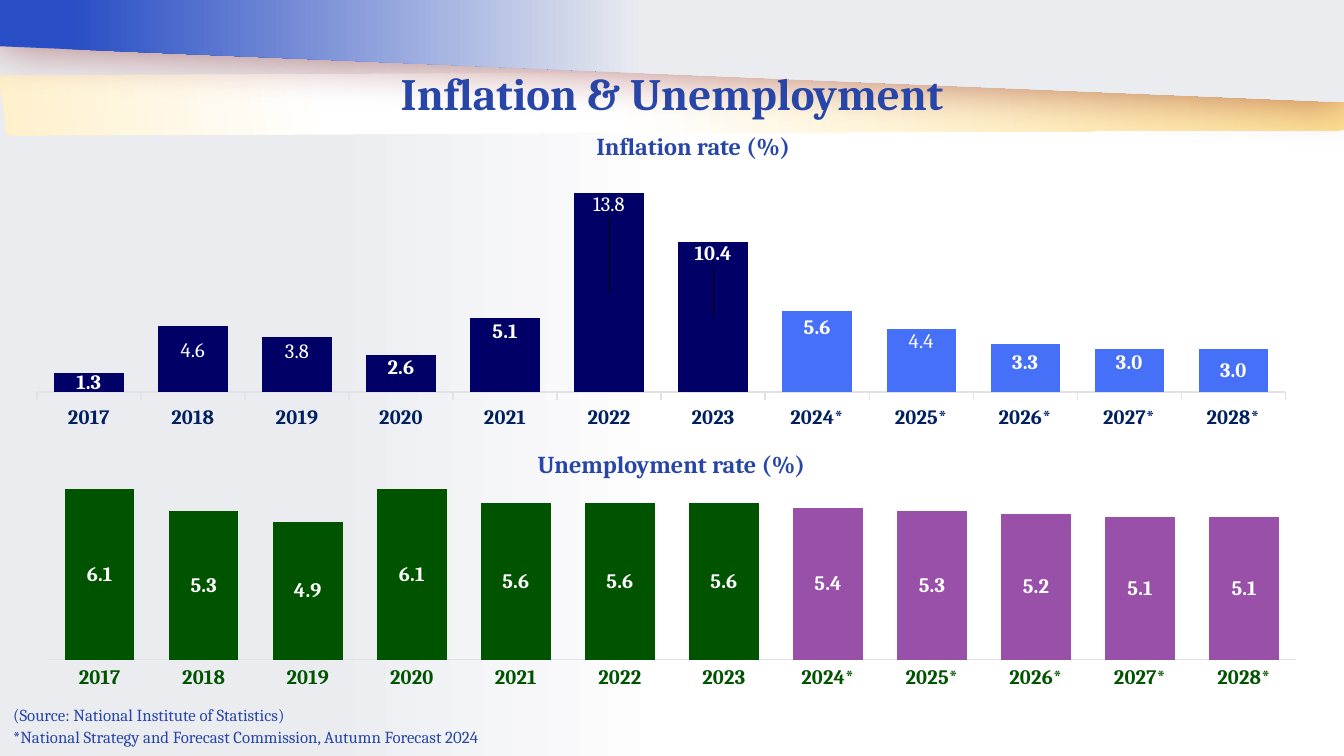
from dataclasses import dataclass

from lxml import etree
from pptx import Presentation
from pptx.chart.data import CategoryChartData
from pptx.dml.color import RGBColor
from pptx.enum.chart import XL_CHART_TYPE, XL_LABEL_POSITION, XL_TICK_MARK
from pptx.enum.shapes import MSO_SHAPE
from pptx.enum.text import MSO_ANCHOR, PP_ALIGN
from pptx.oxml import parse_xml
from pptx.oxml.ns import nsdecls, qn
from pptx.util import Pt

COLUMN = XL_CHART_TYPE.COLUMN_CLUSTERED
MIDDLE = XL_LABEL_POSITION.CENTER
OUTSIDE, NO_TICK = XL_TICK_MARK.OUTSIDE, XL_TICK_MARK.NONE
SLANT = MSO_SHAPE.PARALLELOGRAM
TOP, BOTTOM = MSO_ANCHOR.TOP, MSO_ANCHOR.BOTTOM
LEFT, CENTER = PP_ALIGN.LEFT, PP_ALIGN.CENTER

YEARS = [str(y) + ("*" if y > 2023 else "") for y in range(2017, 2029)]
FORECAST = 7  # index of the first forecast year


@dataclass(frozen=True)
class Theme:
    font: str = "Cambria"
    base: str = "Arial"
    blue: str = "2846A8"
    navy: str = "000066"
    sky: str = "4670F8"
    ink: str = "002060"
    green: str = "005400"
    purple: str = "9950A8"
    white: str = "FFFFFF"
    slate: str = "3E4655"
    rule: str = "E0E2E8"
    shade: str = "7E0808"
    page: tuple = ((0, "FFFFFF"), (50, "FFFFFF"), (76, "EAECF0"), (100, "EAECF0"))
    gold: tuple = ((0, "FFEFC8"), (25, "FFFFFF"), (45, "FFFFFF"), (100, "FFDF8C"))
    sweep: tuple = ((0, "284DC5"), (5, "284DC5"), (48, "EAECF0"), (100, "EAECF0"))
    title: int = 24
    head: int = 13
    label: int = 11
    small: int = 10
    note: int = 9


def rgb(code):
    return RGBColor.from_string(code)


def blend(fill, owner, stops, angle):
    """Give fill a gradient with any number of stops; owner is its XML parent."""
    fill.gradient()
    fill.gradient_angle = angle
    group = owner.find(".//" + qn("a:gsLst"))
    for stop in list(group):
        group.remove(stop)
    for place, code in stops:
        stop = etree.SubElement(group, qn("a:gs"), pos=str(place * 1000))
        etree.SubElement(stop, qn("a:srgbClr"), val=code)


def layout(x, y, size=None):
    """Manual chart layout: a plot area if size is given, else a label offset."""
    parts = [("x", x), ("y", y)]
    if size:
        parts = [("layoutTarget", "inner"), ("xMode", "edge"), ("yMode", "edge"),
                 *parts, ("w", size[0]), ("h", size[1])]
    body = "".join(f'<c:{tag} val="{val}"/>' for tag, val in parts)
    return parse_xml(f'<c:layout {nsdecls("c")}><c:manualLayout>{body}'
                     "</c:manualLayout></c:layout>")


class Deck:
    """Holds the theme and the current slide."""

    def __init__(self, theme):
        self.theme = theme
        self.file = Presentation()
        self.file.slide_width, self.file.slide_height = Pt(720), Pt(405)
        self.slide = self.file.slides.add_slide(self.file.slide_layouts[6])
        blend(self.slide.background.fill, self.slide.element, theme.page, 180)

    def style(self, font, size, code, bold=False, name=None):
        font.name = name or self.theme.font
        font.size, font.bold = Pt(size), bold
        font.color.rgb = rgb(code)

    def band(self, box, turn, skew, stops):
        shape = self.slide.shapes.add_shape(SLANT, *map(Pt, box))
        shape.adjustments[0] = skew
        shape.rotation = turn
        shape.shadow.inherit = False
        shape.line.fill.background()
        blend(shape.fill, shape.element, stops, 270)

    def wedge(self, points, stops):
        """Outline with a gradient and a soft shadow."""
        start, *rest = [(Pt(x), Pt(y)) for x, y in points]
        path = self.slide.shapes.build_freeform(*start)
        path.add_line_segments(rest, close=True)
        shape = path.convert_to_shape()
        shape.line.fill.background()
        blend(shape.fill, shape.element, stops, 0)
        shape.shadow.inherit = False
        glow = etree.SubElement(shape.element.spPr.find(qn("a:effectLst")),
                                qn("a:outerShdw"), blurRad=str(Pt(24.8)), dist="0")
        tint = etree.SubElement(glow, qn("a:srgbClr"), val=self.theme.shade)
        etree.SubElement(tint, qn("a:alpha"), val="50000")

    def text(self, box, lines, size, bold=True, align=CENTER, anchor=TOP,
             inset=(0, 0), space=1.1, wrap=True):
        frame = self.slide.shapes.add_textbox(*map(Pt, box)).text_frame
        frame.word_wrap, frame.vertical_anchor = wrap, anchor
        frame.margin_left = frame.margin_right = Pt(inset[0])
        frame.margin_top = frame.margin_bottom = Pt(inset[1])
        frame.text = "\n".join(lines)
        for para in frame.paragraphs:
            para.alignment, para.line_spacing = align, space
            self.style(para.font, size, self.theme.blue, bold)

    def chart(self, box, values, colors, ink, peak, plot, tick, rule, shifts=()):
        """Column chart; shifts lists (index, bold, dx, dy) of moved labels."""
        data = CategoryChartData(number_format="0.0")
        data.categories = YEARS
        data.add_series("Series 1", values)
        chart = self.slide.shapes.add_chart(COLUMN, *map(Pt, box), data).chart
        theme = self.theme
        chart.has_legend = chart.has_title = False
        self.style(chart.font, theme.small, theme.slate, name=theme.base)

        area = chart.element.find(".//" + qn("c:plotArea"))
        for old in area.findall(qn("c:layout")):
            area.remove(old)
        area.insert(0, layout(0, plot[0], (1, plot[1])))

        axis = chart.category_axis
        axis.major_tick_mark = tick
        axis.format.line.color.rgb = rgb(theme.rule)
        axis.format.line.width = Pt(rule)
        self.style(axis.tick_labels.font, theme.label, ink, True)
        scale = chart.value_axis
        scale.visible = scale.has_major_gridlines = False
        scale.minimum_scale, scale.maximum_scale = 0, peak

        bars = chart.plots[0]
        bars.gap_width, bars.overlap = 50, 25
        bars.vary_by_categories = False
        series = bars.series[0]
        for target, code in [(series, colors[0])] + [
                (series.points[i], colors[1]) for i in range(FORECAST, len(YEARS))]:
            target.format.fill.solid()
            target.format.fill.fore_color.rgb = rgb(code)

        labels = series.data_labels
        labels.show_value, labels.position = True, MIDDLE
        labels.number_format, labels.number_format_is_linked = "0.0", False
        self.style(labels.font, theme.label, theme.white, True)
        for index, bold, dx, dy in shifts:
            label = series.points[index].data_label
            self.style(label.font, theme.label, theme.white, bold)
            label.position = MIDDLE
            mark = labels._element.find(f'{qn("c:dLbl")}/{qn("c:idx")}[@val="{index}"]')
            mark.addnext(layout(dx, dy))


def main():
    theme = Theme()
    deck = Deck(theme)
    deck.band((301, -306, 129.6, 722), 262.1, 0.75, theme.gold)
    deck.wedge([(0, 0), (720, 0), (720, 54.7), (0, 24.8)], theme.sweep)
    deck.text((0, 33, 720, 31), ["Inflation & Unemployment"], theme.title,
              anchor=BOTTOM, space=1)
    deck.text((232, 69, 278.6, 16), ["Inflation rate (%)"], theme.head)
    deck.chart((19.4, 86.4, 669.6, 144),
               [1.3, 4.6, 3.8, 2.6, 5.1, 13.8, 10.4, 5.6, 4.4, 3.3, 3.0, 3.0],
               (theme.navy, theme.sky), theme.ink, 16, (0, 0.87), OUTSIDE, 0,
               [(1, False, 0, -0.03), (2, False, 0, -0.05), (3, True, 0, -0.02),
                (4, True, 0, -0.09), (5, False, 0, -0.33), (6, True, 0, -0.24),
                (7, True, 0, -0.09), (8, False, 0, -0.07), (9, True, 0, -0.02),
                (10, True, 0, -0.03)])
    deck.text((220.3, 239, 278.6, 16), ["Unemployment rate (%)"], theme.head)
    deck.chart((25.2, 247, 669.6, 126.7),
               [6.1, 5.3, 4.9, 6.1, 5.6, 5.6, 5.6, 5.4, 5.3, 5.2, 5.1, 5.1],
               (theme.green, theme.purple), theme.green, 7, (0.01, 0.83),
               NO_TICK, 0.75)
    deck.text((0, 373, 280, 31),
              ["(Source: National Institute of Statistics)",
               "*National Strategy and Forecast Commission, Autumn Forecast 2024"],
              theme.note, bold=False, align=LEFT, inset=(7.2, 3.6), wrap=False)
    deck.file.save("out.pptx")


if __name__ == "__main__":
    main()
